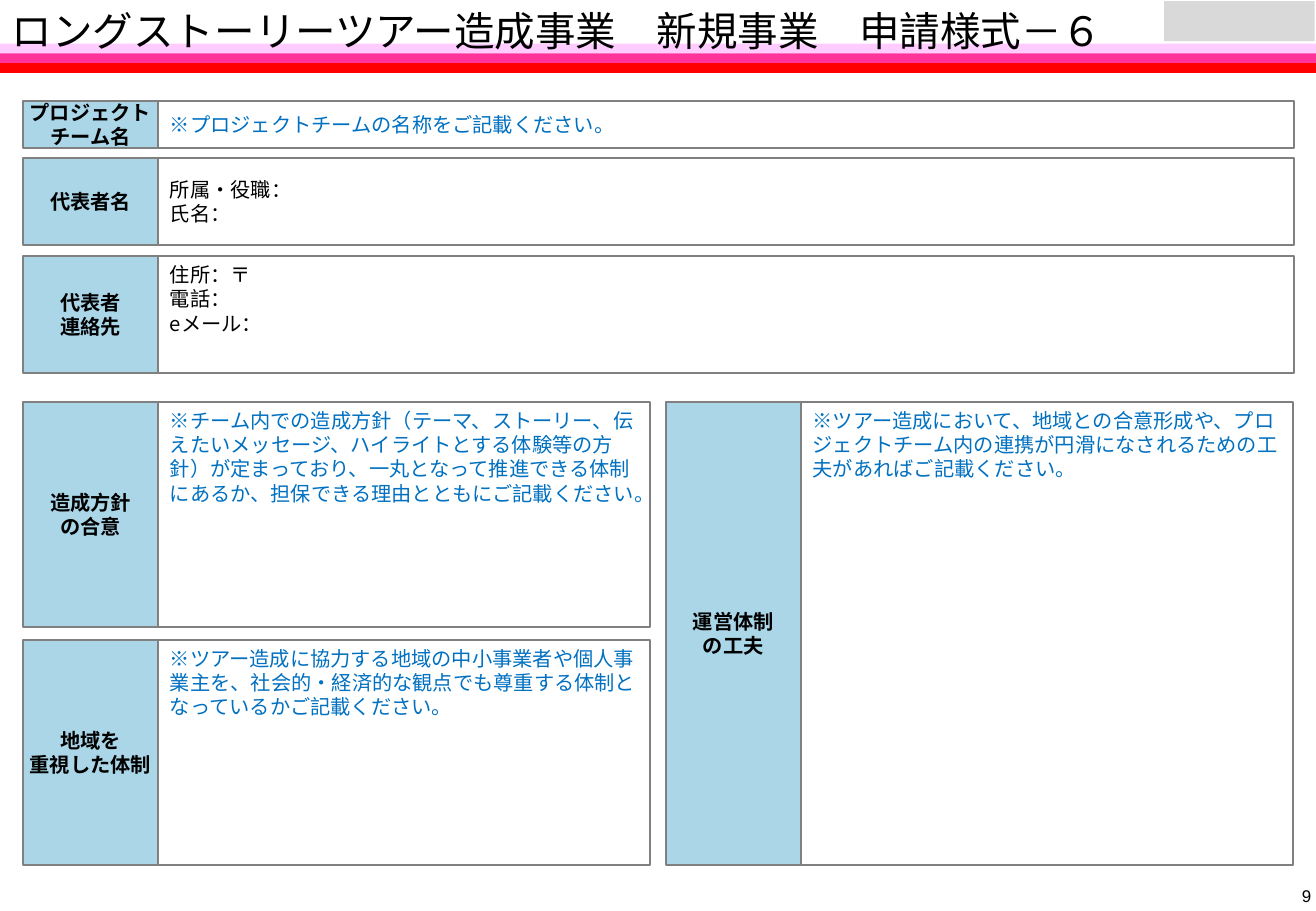
from lxml import etree
from pptx import Presentation
from pptx.dml.color import RGBColor
from pptx.enum import shapes, text
from pptx.oxml import ns
from pptx.util import Inches, Pt

TITLE = "ロングストーリーツアー造成事業　新規事業　申請様式－６"
PAGE = "9"

# label lines, body lines, body colour, body anchor, (left, top, width, height)
FULL, HALF, LEFT, RIGHT = 10.46, 5.16, 0.19, 5.48
FIELDS = [
    (["プロジェクト", "チーム名"], ["※プロジェクトチームの名称をご記載ください。"],
     "hint", "MIDDLE", (LEFT, 0.83, FULL, 0.39)),
    (["代表者名"], ["所属・役職：", "氏名："],
     "ink", "MIDDLE", (LEFT, 1.3, FULL, 0.72)),
    (["代表者", "連絡先"], ["住所：〒", "電話：", "eメール："],
     "ink", "TOP", (LEFT, 2.11, FULL, 0.96)),
    (["造成方針", "の合意"],
     ["※チーム内での造成方針（テーマ、ストーリー、伝えたいメッセージ、ハイライトとする体験等の方針）が"
      "定まっており、一丸となって推進できる体制にあるか、担保できる理由とともにご記載ください。"],
     "hint", "TOP", (LEFT, 3.31, HALF, 1.85)),
    (["地域を", "重視した体制"],
     ["※ツアー造成に協力する地域の中小事業者や個人事業主を、社会的・経済的な観点でも"
      "尊重する体制となっているかご記載ください。"],
     "hint", "TOP", (LEFT, 5.27, HALF, 1.85)),
    (["運営体制", "の工夫"],
     ["※ツアー造成において、地域との合意形成や、プロジェクトチーム内の連携が"
      "円滑になされるための工夫があればご記載ください。"],
     "hint", "TOP", (RIGHT, 3.31, HALF, 3.81)),
]
LABEL_W = 1.11
BAND_TOP, BAND_H = 0.36, 0.08

THEME = {
    "font": "Noto Sans CJK JP", "page_font": "Arial",
    "title_size": 24, "field_size": 12, "page_size": 10,
    "ink": "000000", "hint": "0070C0", "label": "AAD6E7", "paper": "FFFFFF",
    "border": "808080", "emblem": "D9D9D9",
    "bands": ["FFCCFF", "FF3399", "FF0000"],
}


def rgb(value):
    return RGBColor.from_string(value)


def add_box(slide, box, fill, line=None):
    sp = slide.shapes.add_shape(shapes.MSO_SHAPE.RECTANGLE, *map(Inches, box))
    sp.shadow.inherit = False
    sp.fill.solid()
    sp.fill.fore_color.rgb = rgb(fill)
    if line:
        sp.line.color.rgb = rgb(line)
        sp.line.width = Pt(1)
    else:
        sp.line.fill.background()
    return sp


def write(sp, lines, size, color="ink", font="font", bold=False,
          align="LEFT", anchor="MIDDLE", wrap=True, inset=None):
    tf = sp.text_frame
    tf.word_wrap = wrap
    tf.vertical_anchor = getattr(text.MSO_ANCHOR, anchor)
    if inset is not None:
        for side in ("left", "top", "right", "bottom"):
            setattr(tf, f"margin_{side}", Inches(inset))
    for i, line in enumerate(lines):
        p = tf.paragraphs[0] if i == 0 else tf.add_paragraph()
        p.alignment = getattr(text.PP_ALIGN, align)
        r = p.add_run()
        r.text = line
        style = {"name": THEME[font], "size": Pt(THEME[size]), "bold": bold}
        for key, value in style.items():
            setattr(r.font, key, value)
        r.font.color.rgb = rgb(THEME[color])
        # East Asian glyphs take their typeface from a:ea
        ea = etree.SubElement(r.font._element, ns.qn("a:ea"))
        ea.set("typeface", THEME[font])


def add_field(slide, label, body, color, anchor, box):
    """Draw a tinted label cell and the entry cell to its right."""
    left, top, width, height = box
    cell = add_box(slide, (left + LABEL_W, top, width - LABEL_W, height),
                   THEME["paper"], THEME["border"])
    write(cell, body, "field_size", color, anchor=anchor)
    head = add_box(slide, (left, top, LABEL_W, height),
                   THEME["label"], THEME["border"])
    write(head, label, "field_size", bold=True, align="CENTER", wrap=False)


def main():
    prs = Presentation()
    prs.slide_width, prs.slide_height = Inches(10.83), Inches(7.5)
    slide = prs.slides.add_slide(prs.slide_layouts[6])

    for i, color in enumerate(THEME["bands"]):
        add_box(slide, (0, BAND_TOP + i * BAND_H, 10.83, BAND_H), color)
    add_box(slide, (9.58, 0.01, 1.24, 0.33), THEME["emblem"])

    title = slide.shapes.add_textbox(*map(Inches, (0, 0.07, 9.99, 0.36)))
    write(title, [TITLE], "title_size")

    for field in FIELDS:
        add_field(slide, *field)

    page = slide.shapes.add_textbox(*map(Inches, (10.59, 7.27, 0.24, 0.23)))
    write(page, [PAGE], "page_size", font="page_font", align="RIGHT",
          anchor="BOTTOM", wrap=False, inset=0.04)

    prs.save("out.pptx")


if __name__ == "__main__":
    main()
